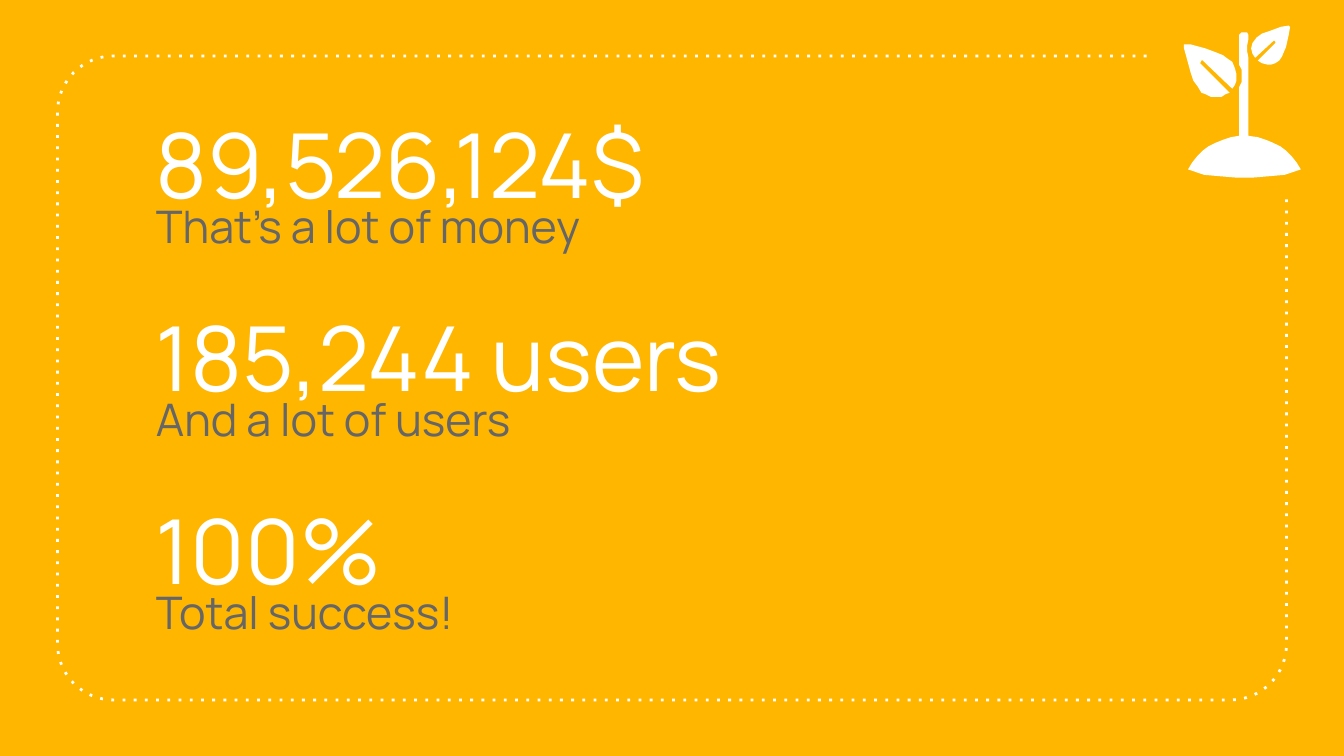
from math import cos, radians, sin

from pptx import Presentation
from pptx.dml.color import RGBColor
from pptx.enum.dml import MSO_LINE
from pptx.enum.text import MSO_ANCHOR
from pptx.oxml.ns import qn
from pptx.util import Pt

AMBER = RGBColor(0xFF, 0xB6, 0x00)
WHITE = RGBColor(0xFF, 0xFF, 0xFF)
GRAY = RGBColor(0x66, 0x66, 0x66)
FONT = "Manrope"

STATS = [
    ("89,526,124$", "That’s a lot of money"),
    ("185,244 users", "And a lot of users"),
    ("100%", "Total success!"),
]

# Plant outlines on a grid of 87 by 113 units
PLANT_GRID = (87, 113)
SMALL_LEAF = [
    (78, 0), (72, 1), (64, 4), (58, 6), (54, 9), (51, 13), (50, 17), (51, 21),
    (53, 24), (66, 12), (67, 11), (68, 12), (68, 13), (55, 26), (58, 28),
    (62, 29), (65, 29), (68, 28), (71, 26), (73, 23), (76, 16), (78, 7), (79, 1),
]
LARGE_LEAF = [
    (0, 14), (0, 17), (2, 24), (5, 35), (7, 41), (10, 45), (13, 50), (16, 51),
    (20, 53), (24, 53), (28, 53), (31, 51), (34, 50), (13, 29), (12, 28),
    (13, 26), (14, 26), (15, 27), (36, 47), (38, 44), (39, 41), (39, 36),
    (38, 32), (36, 27), (33, 25), (29, 22), (24, 20), (16, 17), (5, 14),
]
STEM_LEFT = [
    (45, 5), (43, 5), (41, 7), (41, 29), (43, 33), (43, 42), (41, 46), (41, 82),
]
MOUND_LEFT = [
    (35, 83), (29, 85), (24, 87), (18, 90), (14, 93), (10, 97), (6, 102),
    (3, 107), (6, 108), (15, 111), (26, 112), (38, 113),
]
MOUND_RIGHT = [(90 - x, y) for x, y in reversed(MOUND_LEFT)]
STEM_RIGHT = [(48, 82), (48, 24), (47, 19), (47, 15), (48, 10), (48, 7), (47, 5)]
SPROUT = STEM_LEFT + MOUND_LEFT + MOUND_RIGHT + STEM_RIGHT


def add_outline(slide, points, close):
    """Draw a freeform through points given in points (pt)."""
    vertices = [(Pt(x), Pt(y)) for x, y in points]
    builder = slide.shapes.build_freeform(*vertices[0])
    builder.add_line_segments(vertices[1:], close=close)
    shape = builder.convert_to_shape()
    shape.shadow.inherit = False
    return shape


def corner(center_x, center_y, radius, start):
    """Return a quarter turn, counterclockwise on screen from start degrees."""
    angles = [radians(start - 90 * step / 16) for step in range(17)]
    return [(center_x + radius * cos(a), center_y + radius * sin(a)) for a in angles]


def add_dotted_frame(slide, left, top, width, height):
    """Draw a rounded frame left open at the top right corner."""
    radius = 30
    right, bottom = left + width, top + height
    points = [
        (right - 75, top),
        *corner(left + radius, top + radius, radius, 270),
        *corner(left + radius, bottom - radius, radius, 180),
        *corner(right - radius, bottom - radius, radius, 90),
        (right, top + 75),
    ]
    frame = add_outline(slide, points, close=False)
    frame.fill.background()
    frame.line.color.rgb = WHITE
    frame.line.width = Pt(1.5)
    frame.line.dash_style = MSO_LINE.ROUND_DOT
    for dash in frame.line._ln.iter(qn("a:prstDash")):
        dash.set("val", "dot")


def add_plant(slide, left, top, width, height):
    columns, rows = PLANT_GRID
    for outline in (SMALL_LEAF, SPROUT, LARGE_LEAF):
        points = [(left + x * width / columns, top + y * height / rows) for x, y in outline]
        shape = add_outline(slide, points, close=True)
        shape.fill.solid()
        shape.fill.fore_color.rgb = WHITE
        shape.line.fill.background()


def add_text(slide, text, left, top, width, height, size, color, space_before=0):
    frame = slide.shapes.add_textbox(Pt(left), Pt(top), Pt(width), Pt(height)).text_frame
    frame.word_wrap = True
    frame.vertical_anchor = MSO_ANCHOR.TOP
    frame.margin_left = frame.margin_right = Pt(7.2)
    frame.margin_top = frame.margin_bottom = Pt(7.2)
    paragraph = frame.paragraphs[0]
    paragraph.space_before = Pt(space_before)
    run = paragraph.add_run()
    run.text = text
    run.font.name = FONT
    run.font.size = Pt(size)
    run.font.color.rgb = color


def add_stats(slide, left, top, width, pitch):
    for index, (figure, caption) in enumerate(STATS):
        row_top = top + index * pitch
        add_text(slide, figure, left, row_top, width, 70.6, 48, WHITE)
        add_text(slide, caption, left, row_top + 48, width, 36.7, 24, GRAY, space_before=6)


def main():
    presentation = Presentation()
    presentation.slide_width = Pt(720)
    presentation.slide_height = Pt(405)
    slide = presentation.slides.add_slide(presentation.slide_layouts[6])
    slide.background.fill.solid()
    slide.background.fill.fore_color.rgb = AMBER
    add_dotted_frame(slide, 30.8, 30, 658.4, 345)
    add_stats(slide, 76.5, 51.2, 566.6, 103.3)
    add_plant(slide, 634.3, 13.7, 62.6, 81.4)
    presentation.save("out.pptx")


if __name__ == "__main__":
    main()
